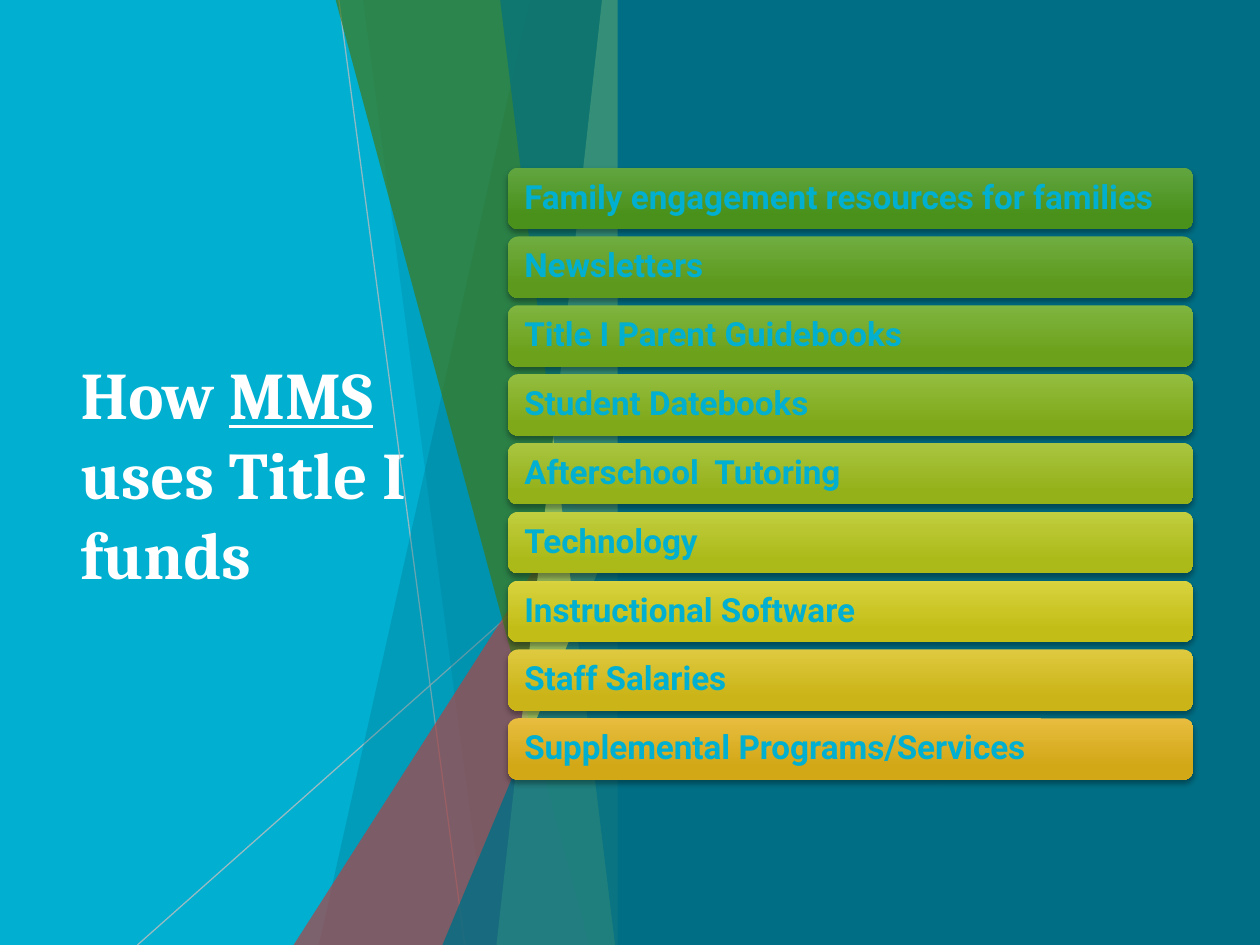
import pptx
import pptx.dml.color
import pptx.enum.dml
import pptx.enum.shapes
import pptx.enum.text
import pptx.oxml
import pptx.oxml.ns
import pptx.util
from lxml import etree
from pptx.util import Cm

COLORS = {
    "sky": "01AFD1", "teal": "006F85", "red": "AF4345", "green": "3F7818",
    "lime": "BFE471", "gray": "BFBFBF", "white": "FFFFFF", "black": "000000",
}
TITLE = [("How ", False), ("MMS", True), (" uses Title I funds", False)]
USES = [
    ("Family engagement resources for families", "61A540", "4A911B"),
    ("Newsletters", "70AD41", "5C991C"),
    ("Title I Parent Guidebooks", "7FB540", "6CA11B"),
    ("Student Datebooks", "93BD3F", "80A91A"),
    ("Afterschool  Tutoring", "A9C540", "95B11A"),
    ("Technology", "C1CE3F", "ACBA19"),
    ("Instructional Software", "D8D33E", "C3BE17"),
    ("Staff Salaries", "DFC93F", "CBB417"),
    ("Supplemental Programs/Services", "E8BC3E", "D2A817"),
]
WIDTH, HEIGHT = 25.4, 19.05
FACET_RIGHT, FACET_TOP = 12.7, -0.03
RAYS = [((6.83, 0), (9.37, HEIGHT), 74), ((12.7, 10.24), (2.77, HEIGHT), 80)]
FACETS = [
    ("band", 10.69, 6.43, "teal", 29),
    ("band", 7.32, 9.83, "teal", 20),
    ("triangle", 5.92, 8.46, "red", 71),
    ("band", 6.76, 11.89, "green", 69),
    ("band", 12.14, 10.01, "lime", 69),
    ("band", 10.08, 12.4, "teal", 64),
    ("triangle", 8.92, 9.98, "teal", 80),
]
PANEL_LEFT = 12.45
BAR_LEFT, BAR_WIDTH, BAR_HEIGHT = 10.24, 13.82, 1.24
FIRST_BAR, LAST_BAR = 3.38, 14.48


def rgb(value):
    return pptx.dml.color.RGBColor.from_string(value)


def add_child(parent, tag, **attributes):
    child = etree.SubElement(parent, pptx.oxml.ns.qn(tag))
    for name, value in attributes.items():
        child.set(name, str(value))
    return child


def set_alpha(shape, percent):
    color = next(shape.element.spPr.iter(pptx.oxml.ns.qn("a:srgbClr")))
    add_child(color, "a:alpha", val=percent * 1000)


def write(para, text, size=19, font="Roboto", color="sky", underline=False):
    span = para.add_run()
    span.text = text
    span.font.size = pptx.util.Pt(size)
    span.font.name = font
    span.font.bold = True
    span.font.underline = underline
    span.font.color.rgb = rgb(COLORS[color])


def fill_solid(shape, color):
    shape.shadow.inherit = False
    shape.fill.solid()
    shape.fill.fore_color.rgb = rgb(COLORS[color])
    shape.line.fill.background()


def add_preset(page, kind, left, top, width, height):
    return page.shapes.add_shape(kind, Cm(left), Cm(top), Cm(width), Cm(height))


def add_title(page):
    title = page.shapes.title
    title.left, title.top, title.width, title.height = Cm(1.37), Cm(3.84), Cm(7.39), Cm(11.38)
    frame = title.text_frame
    frame.word_wrap = True
    frame.auto_size = pptx.enum.text.MSO_AUTO_SIZE.NONE
    frame.vertical_anchor = pptx.enum.text.MSO_ANCHOR.MIDDLE
    para = frame.paragraphs[0]
    para.alignment = pptx.enum.text.PP_ALIGN.LEFT
    for text, underline in TITLE:
        write(para, text, size=38, font="Cambria", color="white", underline=underline)


def add_ray(page, start, end, alpha):
    ray = page.shapes.add_connector(
        pptx.enum.shapes.MSO_CONNECTOR.STRAIGHT, *map(Cm, start + end))
    ray.line.color.rgb = rgb(COLORS["gray"])
    ray.line.width = pptx.util.Pt(0.75)
    set_alpha(ray, alpha)
    add_child(ray.element.spPr, "a:effectLst")


def add_band(page, top_left, bottom_left):
    corners = [(FACET_RIGHT, FACET_TOP), (FACET_RIGHT, HEIGHT), (bottom_left, HEIGHT)]
    builder = page.shapes.build_freeform(Cm(top_left), Cm(FACET_TOP))
    builder.add_line_segments([(Cm(x), Cm(y)) for x, y in corners], close=True)
    return builder.convert_to_shape()


def add_triangle(page, left, top):
    triangle = add_preset(page, pptx.enum.shapes.MSO_SHAPE.ISOSCELES_TRIANGLE,
                          left, top, FACET_RIGHT - left, HEIGHT - top)
    triangle.adjustments[0] = 1
    return triangle


def add_bar(page, top, text, light, dark):
    bar = add_preset(page, pptx.enum.shapes.MSO_SHAPE.ROUNDED_RECTANGLE,
                     BAR_LEFT, top, BAR_WIDTH, BAR_HEIGHT)
    bar.adjustments[0] = 0.167
    bar.fill.gradient()
    bar.fill.gradient_angle = 270
    for stop, position, color in zip(bar.fill.gradient_stops, (0, 0.78), (light, dark)):
        stop.position = position
        stop.color.rgb = rgb(color)
    bar.line.fill.background()
    bar.shadow.inherit = False
    effects = bar.element.spPr.find(pptx.oxml.ns.qn("a:effectLst"))
    shadow = add_child(effects, "a:outerShdw", blurRad=pptx.util.Pt(3),
                       dist=pptx.util.Pt(2), dir=90 * 60000, rotWithShape=0)
    shade = add_child(shadow, "a:srgbClr", val=COLORS["black"])
    add_child(shade, "a:alpha", val=34000)
    frame = bar.text_frame
    frame.word_wrap = True
    frame.vertical_anchor = pptx.enum.text.MSO_ANCHOR.MIDDLE
    frame.margin_left = frame.margin_right = Cm(0.27)
    frame.margin_top = frame.margin_bottom = Cm(0.2)
    para = frame.paragraphs[0]
    para.alignment = pptx.enum.text.PP_ALIGN.LEFT
    para.line_spacing = 0.9
    write(para, text)


def main():
    deck = pptx.Presentation()
    deck.slide_width, deck.slide_height = Cm(WIDTH), Cm(HEIGHT)
    page = deck.slides.add_slide(deck.slide_layouts[5])
    page.background.fill.solid()
    page.background.fill.fore_color.rgb = rgb(COLORS["sky"])
    add_title(page)
    for ray in RAYS:
        add_ray(page, *ray)
    builders = {"band": add_band, "triangle": add_triangle}
    for kind, first, second, color, alpha in FACETS:
        facet = builders[kind](page, first, second)
        fill_solid(facet, color)
        set_alpha(facet, alpha)
    panel = add_preset(page, pptx.enum.shapes.MSO_SHAPE.RECTANGLE,
                       PANEL_LEFT, 0, WIDTH - PANEL_LEFT, HEIGHT)
    fill_solid(panel, "teal")
    pitch = (LAST_BAR - FIRST_BAR) / (len(USES) - 1)
    for index, use in enumerate(USES):
        add_bar(page, FIRST_BAR + index * pitch, *use)
    deck.save("out.pptx")


if __name__ == "__main__":
    main()
